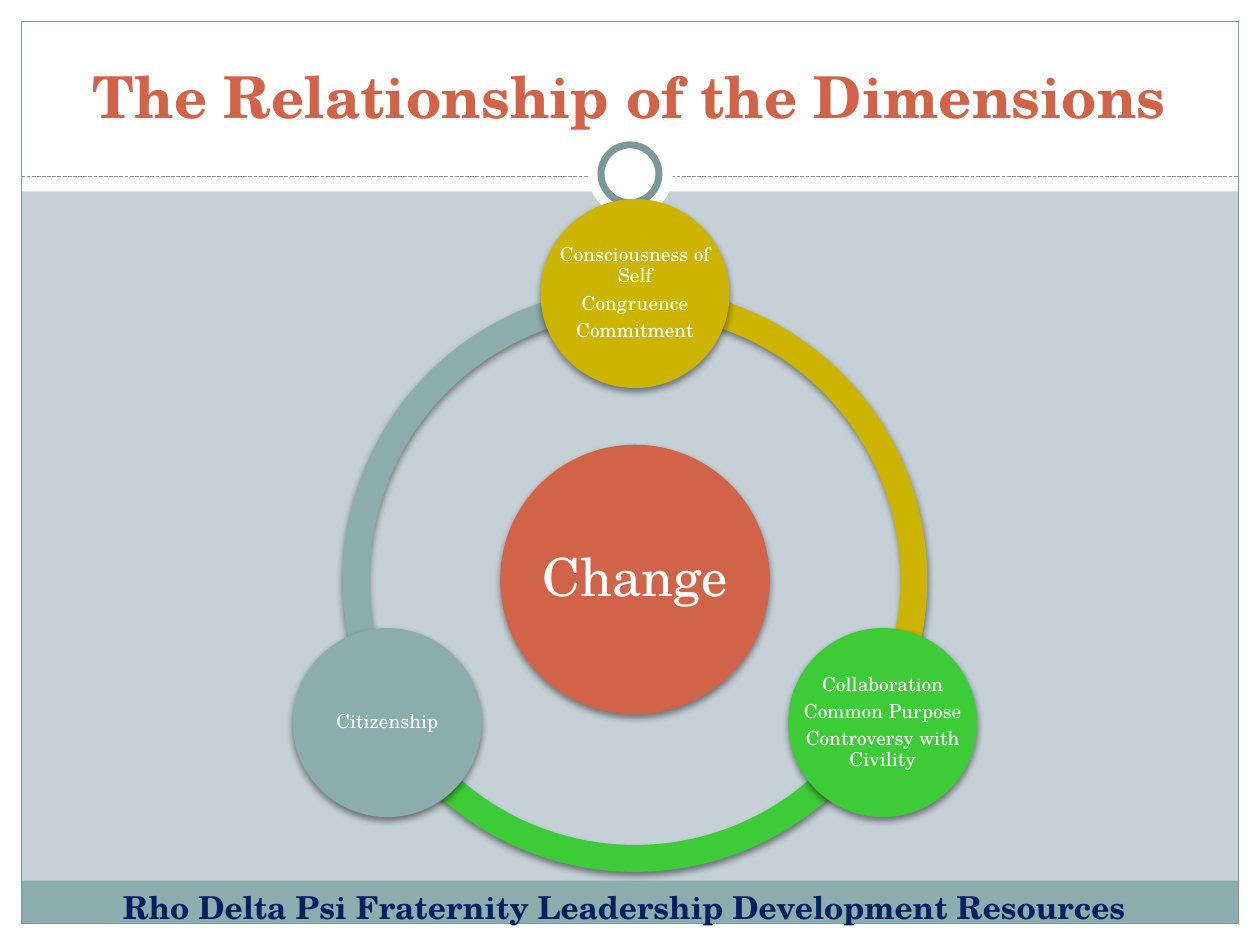
from math import cos, radians, sin

from lxml.etree import SubElement
from pptx import Presentation
from pptx.dml.color import RGBColor
from pptx.enum.dml import MSO_LINE
from pptx.enum.shapes import MSO_CONNECTOR, MSO_SHAPE
from pptx.enum.text import MSO_ANCHOR, PP_ALIGN
from pptx.oxml.ns import qn
from pptx.util import Inches, Pt

FONT = "TeX Gyre Schola"
WHITE = RGBColor(0xFF, 0xFF, 0xFF)
BACKGROUND = RGBColor(0xC5, 0xD1, 0xD7)
TEAL = RGBColor(0x8C, 0xAD, 0xAE)
DARK_TEAL = RGBColor(0x7C, 0x99, 0x9A)
RUST = RGBColor(0xD1, 0x63, 0x49)
GOLD = RGBColor(0xCC, 0xB4, 0x00)
GREEN = RGBColor(0x3E, 0xCB, 0x38)
NAVY = RGBColor(0x00, 0x20, 0x60)

# Outer nodes: angle clockwise from the right, colour, lines
NODES = [
    (270, GOLD, ["Consciousness of Self", "Congruence", "Commitment"]),
    (30, GREEN, ["Collaboration", "Common Purpose", "Controversy with Civility"]),
    (150, TEAL, ["Citizenship"]),
]


def add_shape(s, kind, box, fill=None, line=None, width=0.75):
    sp = s.shapes.add_shape(kind, *map(Inches, box))
    sp.shadow.inherit = False
    if fill is None:
        sp.fill.background()
    else:
        sp.fill.solid()
        sp.fill.fore_color.rgb = fill
    if line is None:
        sp.line.fill.background()
    else:
        sp.line.color.rgb = line
        sp.line.width = Pt(width)
    return sp


def add_shadow(sp):
    effects = sp._element.spPr.find(qn("a:effectLst"))
    shadow = SubElement(effects, qn("a:outerShdw"), blurRad=str(Pt(4)), dist=str(Pt(2)),
                        dir="5400000", rotWithShape="0")
    color = SubElement(shadow, qn("a:srgbClr"), val="000000")
    SubElement(color, qn("a:alpha"), val="45000")


def write(tf, lines, size, color, bold=False, anchor=MSO_ANCHOR.TOP, inset=None, spacing=None):
    tf.word_wrap = True
    tf.vertical_anchor = anchor
    if inset is not None:
        for side in ("left", "top", "right", "bottom"):
            setattr(tf, f"margin_{side}", Inches(inset))
    for i, line in enumerate(lines):
        p = tf.paragraphs[0] if i == 0 else tf.add_paragraph()
        p.alignment = PP_ALIGN.CENTER
        if spacing:
            for name, value in spacing.items():
                setattr(p, name, value)
        r = p.add_run()
        r.text = line
        for name, value in {"name": FONT, "size": Pt(size), "bold": bold}.items():
            setattr(r.font, name, value)
        r.font.color.rgb = color


def add_frame(s, width, height):
    """White margins, bottom band, border and the ring on the dashed rule."""
    edge = 0.17
    for box in [(0, height - edge, width, edge), (0, 0, width, 1.52),
                (0, 0, edge, height), (width - edge, 0, edge, height)]:
        add_shape(s, MSO_SHAPE.RECTANGLE, box, WHITE)
    inner = width - 2 * edge
    add_shape(s, MSO_SHAPE.RECTANGLE, (edge, 6.99, inner, 0.34), TEAL)
    add_shape(s, MSO_SHAPE.RECTANGLE, (edge, edge, inner, height - 2 * edge), line=DARK_TEAL)

    # Dashed rule
    rule = s.shapes.add_connector(MSO_CONNECTOR.STRAIGHT, Inches(edge), Inches(1.4),
                                  Inches(width - edge), Inches(1.4))
    rule.line.color.rgb = DARK_TEAL
    rule.line.width = Pt(0.75)
    rule.line.dash_style = MSO_LINE.SQUARE_DOT
    SubElement(rule._element.spPr, qn("a:effectLst"))

    # Ring
    add_shape(s, MSO_SHAPE.OVAL, (4.67, 1.05, 0.67, 0.67), WHITE)
    add_shape(s, MSO_SHAPE.OVAL, (4.77, 1.15, 0.46, 0.46), WHITE, DARK_TEAL, 4)


def add_title(s, box, text):
    title = s.shapes.title
    title.left, title.top, title.width, title.height = map(Inches, box)
    write(title.text_frame, [text], 33, RUST, True, MSO_ANCHOR.BOTTOM)
    s.shapes._spTree.append(title._element)  # in front of the frame


def add_disc(s, cx, cy, size, color, lines, font_size, inset):
    box = (cx - size / 2, cy - size / 2, size, size)
    add_shadow(add_shape(s, MSO_SHAPE.OVAL, box, color))
    label = s.shapes.add_textbox(*map(Inches, box))
    write(label.text_frame, lines, font_size, WHITE, anchor=MSO_ANCHOR.MIDDLE, inset=inset,
          spacing={"line_spacing": 0.9, "space_after": Pt(round(0.35 * font_size, 1))})


def add_cycle(s, box):
    """Ring of arcs joining the outer nodes around a central disc."""
    left, top, size, _ = box
    cx, cy = left + size / 2, top + size / 2
    # Each arc runs clockwise from its node to the next
    for angle, color, _ in reversed(NODES):
        arc = add_shape(s, MSO_SHAPE.BLOCK_ARC, box, color)
        # Adjustments count in 100,000ths, angles in 60,000ths of a degree
        for i, value in enumerate((angle * 0.6, (angle + 120) % 360 * 0.6, 0.046)):
            arc.adjustments[i] = value
        add_shadow(arc)
    add_disc(s, cx, cy, 2.14, RUST, ["Change"], 30, 0.04)
    radius = 2.27
    for angle, color, lines in NODES:
        a = radians(angle)
        add_disc(s, cx + radius * cos(a), cy + radius * sin(a), 1.5, color, lines, 11, 0.02)


def add_footer(s, box, text):
    tb = s.shapes.add_textbox(*map(Inches, box))
    write(tb.text_frame, [text], 18, NAVY, True)


def main():
    prs = Presentation()
    prs.slide_width, prs.slide_height = Inches(10), Inches(7.5)
    s = prs.slides.add_slide(prs.slide_layouts[5])
    s.background.fill.solid()
    s.background.fill.fore_color.rgb = BACKGROUND
    add_frame(s, 10, 7.5)
    add_title(s, (0.33, 0.25, 9.33, 0.83), "The Relationship of the Dimensions")
    add_cycle(s, (2.72, 2.28, 4.64, 4.64))
    add_footer(s, (0.33, 7, 9.25, 0.42),
               "Rho Delta Psi Fraternity Leadership Development Resources")
    prs.save("out.pptx")


if __name__ == "__main__":
    main()
